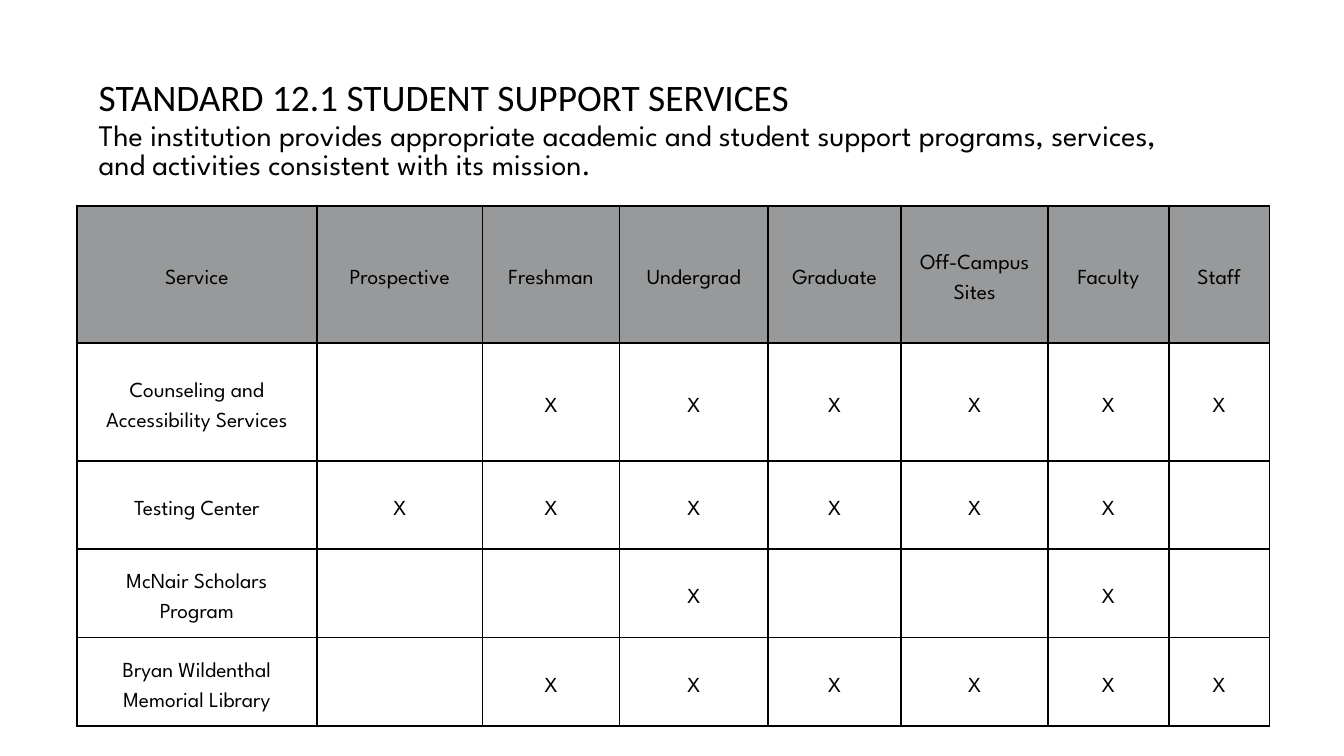
from lxml import etree
from pptx import Presentation
from pptx.dml.color import RGBColor
from pptx.enum.text import MSO_ANCHOR, MSO_AUTO_SIZE, PP_ALIGN
from pptx.oxml.ns import qn
from pptx.util import Pt

TOP, MIDDLE = MSO_ANCHOR.TOP, MSO_ANCHOR.MIDDLE
LEFT, CENTER = PP_ALIGN.LEFT, PP_ALIGN.CENTER
NO_AUTOFIT = MSO_AUTO_SIZE.NONE
TITLE_ONLY = 5

BLACK, WHITE, GRAY = "000000", "FFFFFF", "97999B"
HEADING_FONT, BODY_FONT = "Calibri", "League Spartan"
BORDER_WIDTH = 2.25
CELL_MARGIN = 13.7

AUDIENCES = ["Prospective", "Freshman", "Undergrad", "Graduate",
             "Off-Campus Sites", "Faculty", "Staff"]
SERVICES = [
    ("Counseling and Accessibility Services",
     {"Freshman", "Undergrad", "Graduate", "Off-Campus Sites", "Faculty", "Staff"}),
    ("Testing Center",
     {"Prospective", "Freshman", "Undergrad", "Graduate", "Off-Campus Sites", "Faculty"}),
    ("McNair Scholars Program", {"Undergrad", "Faculty"}),
    ("Bryan Wildenthal Memorial Library",
     {"Freshman", "Undergrad", "Graduate", "Off-Campus Sites", "Faculty", "Staff"}),
]
COLUMN_WIDTHS = [257.8, 177.1, 146.9, 159.1, 142.6, 157.7, 128.9, 108]
ROW_HEIGHTS = [146.2, 126.7, 94.3, 95, 95]


def color(hex_code):
    return RGBColor.from_string(hex_code)


def style_paragraph(paragraph, font_name, size, leading, alignment):
    paragraph.alignment = alignment
    paragraph.line_spacing = Pt(leading)
    paragraph.font.name = font_name
    paragraph.font.size = Pt(size)
    paragraph.font.color.rgb = color(BLACK)


def place_text(holder, text, top, height, font_name, size, leading):
    holder.left, holder.top = Pt(105.8), Pt(top)
    holder.width, holder.height = Pt(1144.1), Pt(height)
    frame = holder.text_frame
    frame.margin_left = frame.margin_right = Pt(0)
    frame.margin_top = frame.margin_bottom = Pt(0)
    frame.word_wrap = True
    frame.auto_size = NO_AUTOFIT
    frame.vertical_anchor = TOP
    frame.text = text
    style_paragraph(frame.paragraphs[0], font_name, size, leading, LEFT)


def add_borders(cell):
    properties = cell._tc.get_or_add_tcPr()
    for side in ("a:lnL", "a:lnR", "a:lnT", "a:lnB"):
        line = etree.SubElement(properties, qn(side), w=str(Pt(BORDER_WIDTH)))
        fill = etree.SubElement(line, qn("a:solidFill"))
        etree.SubElement(fill, qn("a:srgbClr"), val=BLACK)


def fill_cell(cell, text, background, size, leading):
    add_borders(cell)
    cell.fill.solid()
    cell.fill.fore_color.rgb = color(background)
    cell.margin_left = cell.margin_right = Pt(CELL_MARGIN)
    cell.margin_top = cell.margin_bottom = Pt(CELL_MARGIN)
    cell.vertical_anchor = MIDDLE
    cell.text = text
    style_paragraph(cell.text_frame.paragraphs[0], BODY_FONT, size, leading, CENTER)


def add_service_table(slide):
    rows = [["Service"] + AUDIENCES]
    for service, served in SERVICES:
        rows.append([service] + ["X" if audience in served else "" for audience in AUDIENCES])
    table = slide.shapes.add_table(
        len(rows), len(rows[0]), Pt(82.1), Pt(221),
        Pt(sum(COLUMN_WIDTHS)), Pt(sum(ROW_HEIGHTS))).table
    table.first_row = table.horz_banding = False
    for column, width in zip(table.columns, COLUMN_WIDTHS):
        column.width = Pt(width)
    for row, height in zip(table.rows, ROW_HEIGHTS):
        row.height = Pt(height)
    for row_number, texts in enumerate(rows):
        background, size, leading = (WHITE, 22.9, 32.1) if row_number else (GRAY, 23, 32.2)
        for column_number, text in enumerate(texts):
            fill_cell(table.cell(row_number, column_number), text, background, size, leading)


def main():
    presentation = Presentation()
    presentation.slide_width, presentation.slide_height = Pt(1440), Pt(810)
    slide = presentation.slides.add_slide(presentation.slide_layouts[TITLE_ONLY])
    add_service_table(slide)
    place_text(slide.shapes.title, "STANDARD 12.1 STUDENT SUPPORT SERVICES",
               87.1, 41.8, HEADING_FONT, 40, 40)
    standard = slide.shapes.add_textbox(Pt(0), Pt(0), Pt(0), Pt(0))
    place_text(standard, "The institution provides appropriate academic and student support "
               "programs, services, and activities consistent with its mission.",
               132.5, 64.8, BODY_FONT, 32, 31)
    presentation.save("out.pptx")


if __name__ == "__main__":
    main()
